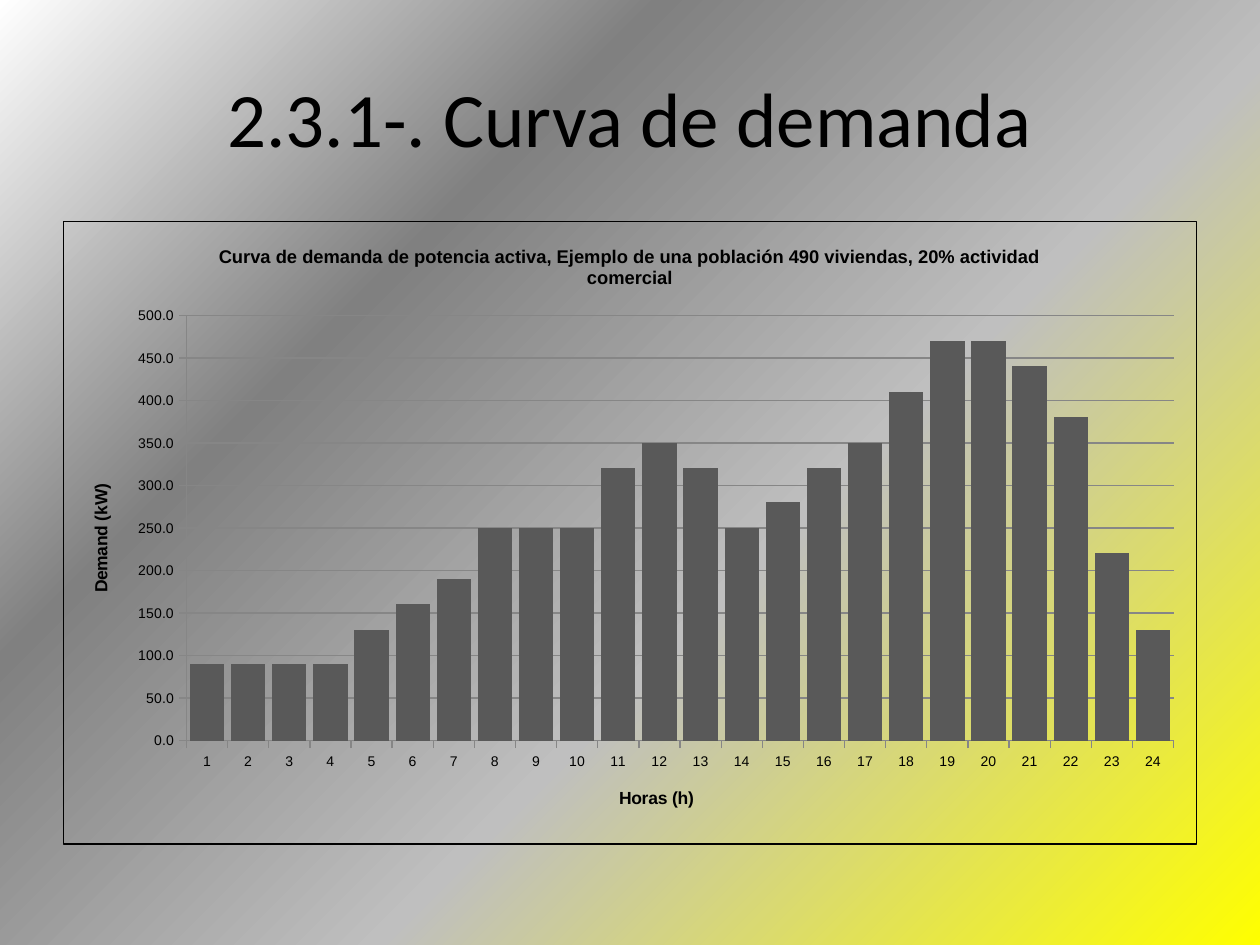
import pptx
import pptx.chart.data
import pptx.dml.color
import pptx.enum.chart
import pptx.enum.text
import pptx.oxml
import pptx.oxml.ns
import pptx.util
from pptx.util import Cm, Pt

HEADING = "2.3.1-. Curva de demanda"
CHART_HEADING = ("Curva de demanda de potencia activa, Ejemplo de una población "
                 "490 viviendas, 20% actividad comercial")
HOURS_LABEL = "Horas (h)"
DEMAND_LABEL = "Demand (kW)"
HOURLY_DEMAND = [90, 90, 90, 90, 130, 160, 190, 250, 250, 250, 320, 350,
                 320, 250, 280, 320, 350, 410, 470, 470, 440, 380, 220, 130]
BACKGROUND_STOPS = [(0, "FFFF00"), (40, "BFBFBF"), (70, "808080"), (100, "FFFFFF")]

BLACK = pptx.dml.color.RGBColor(0x00, 0x00, 0x00)
BAR_GREY = pptx.dml.color.RGBColor(0x59, 0x59, 0x59)
LINE_GREY = pptx.dml.color.RGBColor(0x86, 0x86, 0x86)

NAMESPACES = pptx.oxml.ns.nsdecls("a", "c", "p")
qn = pptx.oxml.ns.qn


def set_background(slide):
    stops = "".join(
        f'<a:gs pos="{percent * 1000}"><a:srgbClr val="{color}"/></a:gs>'
        for percent, color in BACKGROUND_STOPS)
    slide.element.cSld.insert(0, pptx.oxml.parse_xml(
        f'<p:bg {NAMESPACES}><p:bgPr><a:gradFill rotWithShape="1">'
        f'<a:gsLst>{stops}</a:gsLst><a:path path="circle">'
        '<a:fillToRect l="100000" t="100000"/></a:path></a:gradFill>'
        '<a:effectLst/></p:bgPr></p:bg>'))


def place(part, **percents):
    """Give a chart part a manual layout, in percent of the chart area."""
    for old in part.findall(qn("c:layout")):
        part.remove(old)
    inner = '<c:layoutTarget val="inner"/>' if "w" in percents else ""
    lengths = "".join(f'<c:{side} val="{percent / 100:.4f}"/>'
                      for side, percent in percents.items())
    layout = pptx.oxml.parse_xml(
        f'<c:layout {NAMESPACES}><c:manualLayout>{inner}'
        f'<c:xMode val="edge"/><c:yMode val="edge"/>{lengths}'
        '</c:manualLayout></c:layout>')
    part.insert(0 if part.find(qn("c:tx")) is None else 1, layout)


def write_run(paragraph, text, size, font_name, bold):
    run = paragraph.add_run()
    run.text = text
    run.font.size = Pt(size)
    run.font.name = font_name
    run.font.bold = bold
    run.font.color.rgb = BLACK


def add_chart_title(title, text, size, x, y):
    """Write a chart or axis title at a fixed place."""
    write_run(title.text_frame.paragraphs[0], text, size, "Arial", True)
    place(title._element, x=x, y=y)


def draw_line(line):
    line.color.rgb = LINE_GREY
    line.width = Pt(0.75)


def frame_chart(chart):
    """Make the chart area clear, with a square black outline."""
    space = chart.element
    space.find(qn("c:txPr")).addprevious(pptx.oxml.parse_xml(
        f'<c:spPr {NAMESPACES}><a:noFill/><a:ln w="{Pt(0.75)}"><a:solidFill>'
        f'<a:srgbClr val="{BLACK}"/></a:solidFill></a:ln></c:spPr>'))
    if space.find(qn("c:roundedCorners")) is None:
        space.find(qn("c:chart")).addprevious(pptx.oxml.parse_xml(
            f'<c:roundedCorners {NAMESPACES} val="0"/>'))


def add_demand_chart(slide):
    demand = pptx.chart.data.CategoryChartData(number_format="0.0")
    demand.categories = [str(hour + 1) for hour in range(len(HOURLY_DEMAND))]
    demand.add_series("Series 1", HOURLY_DEMAND)
    chart = slide.shapes.add_chart(
        pptx.enum.chart.XL_CHART_TYPE.COLUMN_CLUSTERED,
        Cm(1.27), Cm(4.45), Cm(22.86), Cm(12.58), demand).chart
    chart.font.size = Pt(10)
    chart.font.name = "Arial"
    chart.font.color.rgb = BLACK
    chart.has_legend = False
    frame_chart(chart)

    bars = chart.plots[0]
    bars.vary_by_categories = False
    bars.gap_width = 20
    bars.overlap = 100
    bar_fill = bars.series[0].format.fill
    bar_fill.solid()
    bar_fill.fore_color.rgb = BAR_GREY
    place(chart.element.find(f".//{qn('c:plotArea')}"),
          x=10.85, y=15.1, w=87.15, h=68.3)

    hours, kilowatts = chart.category_axis, chart.value_axis
    for axis in (hours, kilowatts):
        axis.major_tick_mark = pptx.enum.chart.XL_TICK_MARK.OUTSIDE
        axis.minor_tick_mark = pptx.enum.chart.XL_TICK_MARK.NONE
        axis.tick_labels.font.size = Pt(8)
        draw_line(axis.format.line)
    kilowatts.minimum_scale, kilowatts.maximum_scale = 0, 500
    kilowatts.major_unit = 50
    kilowatts.tick_labels.number_format = "0.0"
    kilowatts.tick_labels.number_format_is_linked = False
    draw_line(kilowatts.major_gridlines.format.line)

    add_chart_title(chart.chart_title, CHART_HEADING, 10.5, 13.4, 3.2)
    add_chart_title(hours.axis_title, HOURS_LABEL, 10, 48.75, 90.2)
    add_chart_title(kilowatts.axis_title, DEMAND_LABEL, 10, 2, 41.7)


def main():
    deck = pptx.Presentation()
    deck.slide_width, deck.slide_height = Cm(25.4), Cm(19.05)
    slide = deck.slides.add_slide(deck.slide_layouts[5])
    set_background(slide)

    heading = slide.shapes.title
    heading.left, heading.top = Cm(1.27), Cm(0.76)
    heading.width, heading.height = Cm(22.86), Cm(3.18)
    heading.text_frame.vertical_anchor = pptx.enum.text.MSO_ANCHOR.MIDDLE
    line = heading.text_frame.paragraphs[0]
    line.alignment = pptx.enum.text.PP_ALIGN.CENTER
    write_run(line, HEADING, 44, "Calibri", False)

    add_demand_chart(slide)
    deck.save("out.pptx")


if __name__ == "__main__":
    main()
